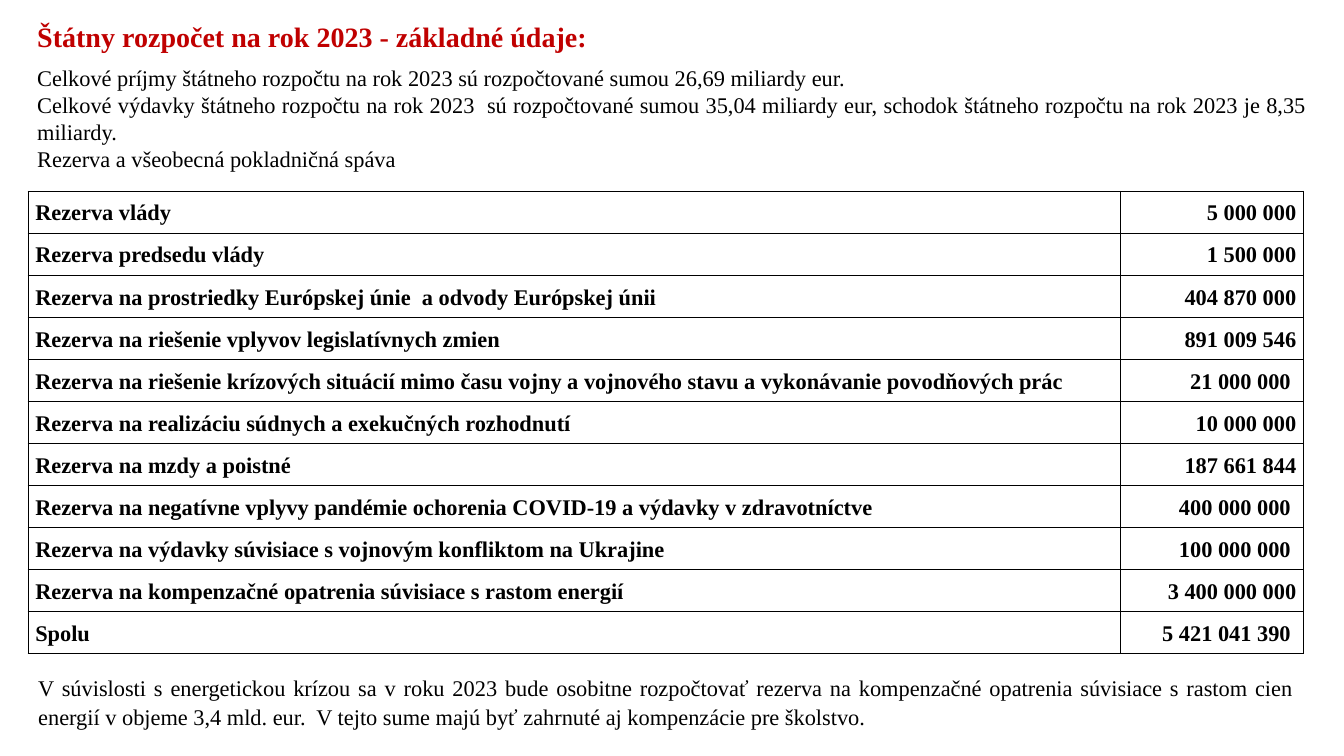
from dataclasses import dataclass

from lxml.etree import SubElement
from pptx import Presentation
from pptx.dml.color import RGBColor
from pptx.enum.text import MSO_ANCHOR, MSO_AUTO_SIZE, PP_ALIGN
from pptx.oxml.ns import qn
from pptx.util import Pt


@dataclass(frozen=True)
class Theme:
    font: str = "Times New Roman"
    title_color: str = "C00000"
    ink: str = "000000"
    title_size: float = 20
    body_size: float = 16
    line_spacing: float = 1.07
    space_after: float = 8
    border: float = 1
    cell_margin: float = 5


class SlideBuilder:
    def __init__(self, slide, theme):
        self.slide, self.theme = slide, theme

    def paragraph(self, p, text, align=PP_ALIGN.JUSTIFY, size=None,
                  color=None, bold=False, spaced=True):
        t = self.theme
        p.alignment = align
        if spaced:
            p.line_spacing = t.line_spacing
            p.space_after = Pt(t.space_after)
        r = p.add_run()
        r.text = text
        r.font.name = t.font
        r.font.size = Pt(size or t.body_size)
        r.font.bold = bold
        r.font.color.rgb = RGBColor.from_string(color or t.ink)

    def text_box(self, x, y, w, h, paragraphs):
        sp = self.slide.shapes.add_textbox(Pt(x), Pt(y), Pt(w), Pt(h))
        tf = sp.text_frame
        tf.word_wrap = True
        tf.auto_size = MSO_AUTO_SIZE.SHAPE_TO_FIT_TEXT
        for i, (text, style) in enumerate(paragraphs):
            p = tf.add_paragraph() if i else tf.paragraphs[0]
            self.paragraph(p, text, **style)

    def borders(self, cell):
        tc_pr = cell._tc.get_or_add_tcPr()
        for side in ("a:lnL", "a:lnR", "a:lnT", "a:lnB"):
            ln = SubElement(tc_pr, qn(side), w=str(Pt(self.theme.border)))
            fill = SubElement(ln, qn("a:solidFill"))
            SubElement(fill, qn("a:srgbClr"), val=self.theme.ink)

    def table(self, x, y, widths, row_height, rows, aligns):
        frame = self.slide.shapes.add_table(
            len(rows), len(widths), Pt(x), Pt(y),
            Pt(sum(widths)), Pt(row_height * len(rows)))
        table = frame.table
        table.first_row = table.horz_banding = False
        for column, width in zip(table.columns, widths):
            column.width = Pt(width)
        for row, texts in zip(table.rows, rows):
            row.height = Pt(row_height)
            for cell, text, align in zip(row.cells, texts, aligns):
                cell.margin_left = cell.margin_right = Pt(self.theme.cell_margin)
                cell.margin_top = cell.margin_bottom = 0
                cell.vertical_anchor = MSO_ANCHOR.MIDDLE
                self.borders(cell)
                cell.fill.background()
                self.paragraph(cell.text_frame.paragraphs[0], text, align, bold=True)


RESERVES = [
    ("Rezerva vlády", "5 000 000"),
    ("Rezerva predsedu vlády", "1 500 000"),
    ("Rezerva na prostriedky Európskej únie  a odvody Európskej únii", "404 870 000"),
    ("Rezerva na riešenie vplyvov legislatívnych zmien", "891 009 546"),
    ("Rezerva na riešenie krízových situácií mimo času vojny a vojnového stavu "
     "a vykonávanie povodňových prác ", "21 000 000 "),
    ("Rezerva na realizáciu súdnych a exekučných rozhodnutí ", "10 000 000"),
    ("Rezerva na mzdy a poistné", "187 661 844"),
    ("Rezerva na negatívne vplyvy pandémie ochorenia COVID-19 "
     "a výdavky v zdravotníctve ", "400 000 000 "),
    ("Rezerva na výdavky súvisiace s vojnovým konfliktom na Ukrajine", "100 000 000 "),
    ("Rezerva na kompenzačné opatrenia súvisiace s rastom energií", "3 400 000 000"),
    ("Spolu ", "5 421 041 390 "),
]


def main():
    prs = Presentation()
    prs.slide_width, prs.slide_height = Pt(960), Pt(540)
    theme = Theme()
    s = SlideBuilder(prs.slides.add_slide(prs.slide_layouts[6]), theme)

    # Title and summary
    title = dict(size=theme.title_size, color=theme.title_color, bold=True)
    plain = dict(spaced=False)
    s.text_box(19.5, 8.6, 921, 119, [
        ("Štátny rozpočet na rok 2023 - základné údaje:", title),
        ("Celkové príjmy štátneho rozpočtu na rok 2023 sú rozpočtované sumou "
         "26,69 miliardy eur. ", plain),
        ("Celkové výdavky štátneho rozpočtu na rok 2023  sú rozpočtované sumou "
         "35,04 miliardy eur, schodok štátneho rozpočtu na rok 2023 je 8,35 miliardy.",
         plain),
        ("Rezerva a všeobecná pokladničná spáva", plain),
    ])

    # Reserves table
    s.table(20.2, 136.8, (780.4, 130.3), 30.04, RESERVES,
            (PP_ALIGN.JUSTIFY, PP_ALIGN.RIGHT))

    # Closing note
    s.text_box(20.2, 476.6, 910.8, 47.5, [
        ("V súvislosti s energetickou krízou sa v roku 2023 bude osobitne rozpočtovať "
         "rezerva na kompenzačné opatrenia súvisiace s rastom cien energií v objeme "
         "3,4 mld. eur.  V tejto sume majú byť zahrnuté aj kompenzácie pre školstvo. ",
         {}),
    ])

    prs.save("out.pptx")


if __name__ == "__main__":
    main()
